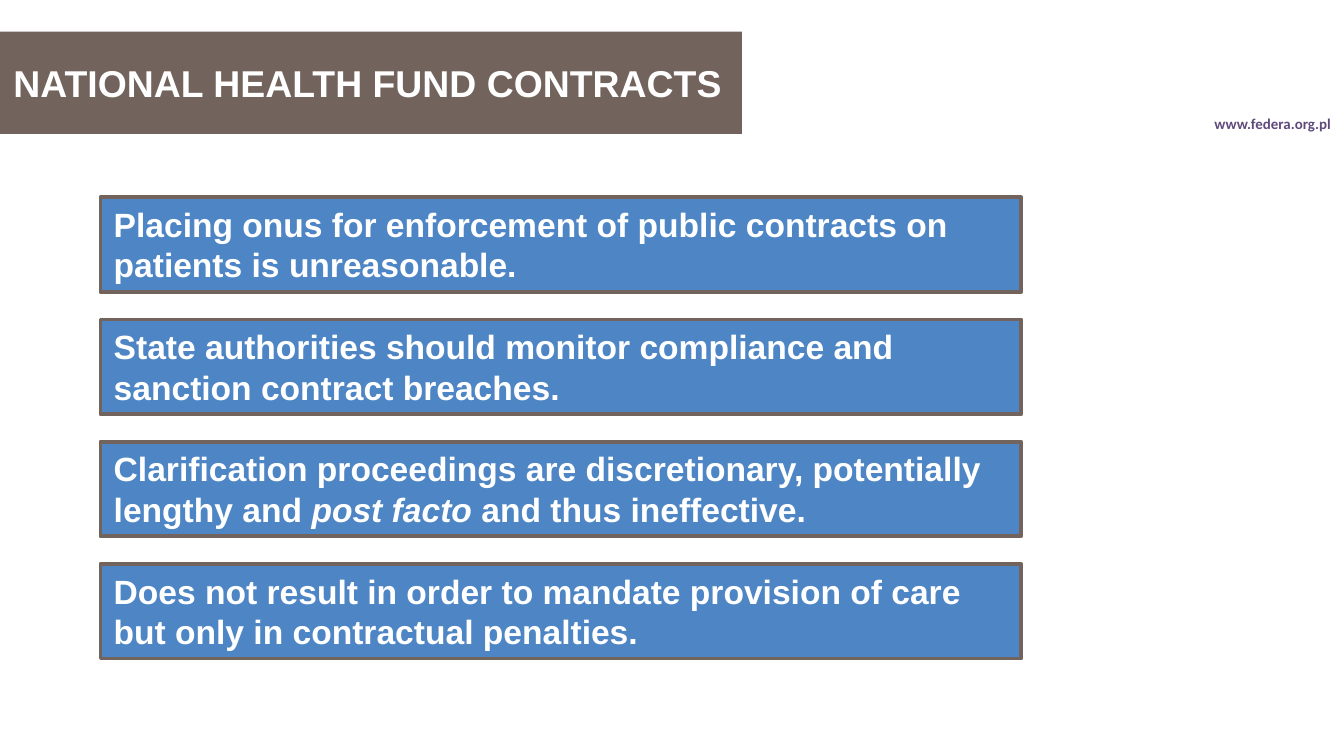
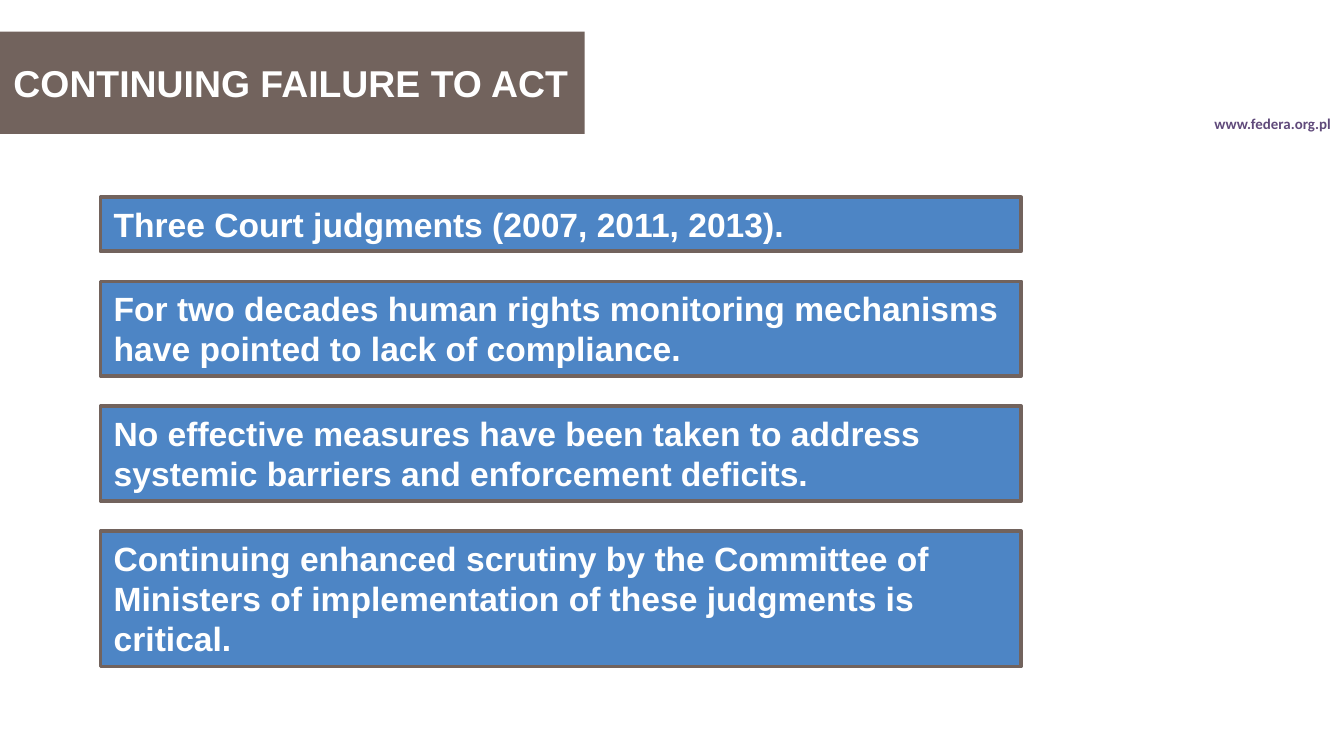
from pptx import Presentation
from pptx.dml.color import RGBColor
from pptx.enum.shapes import MSO_SHAPE
from pptx.enum.text import MSO_ANCHOR, MSO_AUTO_SIZE, PP_ALIGN
from pptx.util import Cm, Pt

WHITE = RGBColor(0xFF, 0xFF, 0xFF)
BROWN = RGBColor(0x72, 0x63, 0x5D)
BLUE = RGBColor(0x4D, 0x85, 0xC5)
PURPLE = RGBColor(0x60, 0x4A, 0x7B)

LINE_HEIGHT = 0.77
CARD_PADDING = 0.25

SLIDES = [
    ("NATIONAL HEALTH FUND CONTRACTS", 14.02, 0.52, [
        (2, [("Placing onus for enforcement of public contracts on patients is unreasonable.", False)]),
        (2, [("State authorities should monitor compliance and sanction contract breaches.", False)]),
        (2, [("Clarification proceedings are discretionary, potentially lengthy and ", False),
             ("post facto", True),
             (" and thus ineffective.", False)]),
        (2, [("Does not result in order to mandate provision of care but only in contractual penalties.", False)]),
    ]),
    ("CONTINUING FAILURE TO ACT", 11.05, 0.57, [
        (1, [("Three Court judgments (2007, 2011, 2013).", False)]),
        (2, [("For two decades human rights monitoring mechanisms have pointed to lack of compliance.", False)]),
        (2, [("No effective measures have been taken to address systemic barriers and enforcement deficits.", False)]),
        (3, [("Continuing enhanced scrutiny by the Committee of Ministers of implementation "
              "of these judgments is critical.", False)]),
    ]),
]


def add_run(p, text, size, color=WHITE, name="Arial", italic=False):
    r = p.add_run()
    r.text = text
    r.font.name = name
    r.font.size = Pt(size)
    r.font.bold = True
    r.font.italic = italic
    r.font.color.rgb = color


def add_title(s, text, left, top, width, height):
    sp = s.shapes.title
    sp.left, sp.top, sp.width, sp.height = Cm(left), Cm(top), Cm(width), Cm(height)
    sp.fill.solid()
    sp.fill.fore_color.rgb = BROWN
    tf = sp.text_frame
    tf.auto_size = MSO_AUTO_SIZE.NONE
    tf.vertical_anchor = MSO_ANCHOR.MIDDLE
    tf.margin_right = 0
    p = tf.paragraphs[0]
    p.alignment = PP_ALIGN.LEFT
    add_run(p, text, 20)


def add_address(s, left, top, width, height):
    sp = s.shapes.add_textbox(Cm(left), Cm(top), Cm(width), Cm(height))
    tf = sp.text_frame
    tf.word_wrap = True
    tf.margin_right = 0
    add_run(tf.paragraphs[0], "www.federa.org.pl", 8, PURPLE, "Calibri")


def add_card(s, runs, left, top, width, height):
    sp = s.shapes.add_shape(MSO_SHAPE.RECTANGLE, Cm(left), Cm(top), Cm(width), Cm(height))
    sp.shadow.inherit = False
    sp.fill.solid()
    sp.fill.fore_color.rgb = BLUE
    sp.line.color.rgb = BROWN
    sp.line.width = Pt(2)
    tf = sp.text_frame
    tf.word_wrap = True
    tf.auto_size = MSO_AUTO_SIZE.SHAPE_TO_FIT_TEXT
    tf.vertical_anchor = MSO_ANCHOR.TOP
    p = tf.paragraphs[0]
    p.alignment = PP_ALIGN.LEFT
    for text, italic in runs:
        add_run(p, text, 18, italic=italic)


def add_cards(s, cards, gap, left, top, width):
    for lines, runs in cards:
        height = CARD_PADDING + lines * LINE_HEIGHT
        add_card(s, runs, left, top, width, height)
        top += height + gap


def add_slide(prs, title, title_width, gap, cards):
    s = prs.slides.add_slide(prs.slide_layouts[5])
    add_title(s, title, 0, 0.6, title_width, 1.93)
    add_cards(s, cards, gap, 1.9, 3.73, 17.4)
    add_address(s, 22.7, 2.05, 2.7, 0.6)


def main():
    prs = Presentation()
    prs.slide_width, prs.slide_height = Cm(25.4), Cm(14.29)
    for content in SLIDES:
        add_slide(prs, *content)
    prs.save("out.pptx")


if __name__ == "__main__":
    main()
